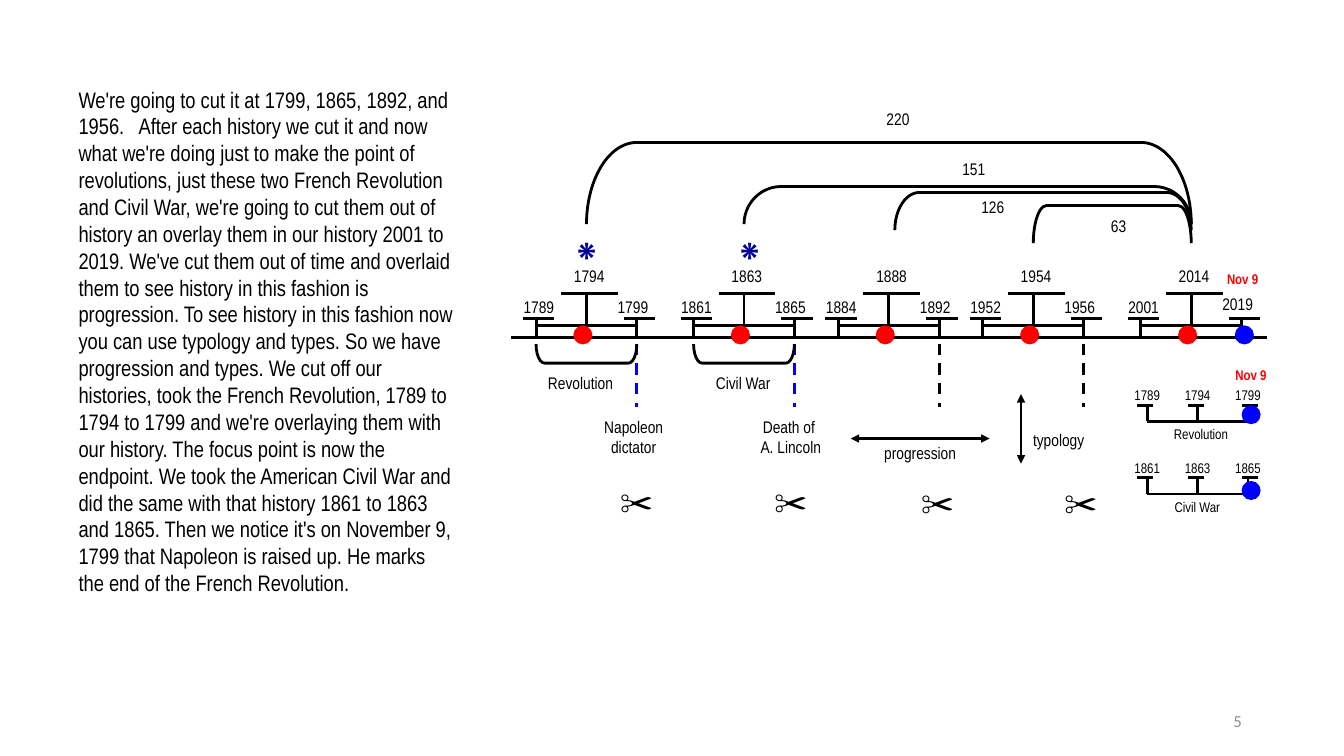
"""Build a slide of overlaid history timelines beside an explanatory text."""
import pptx
import pptx.util
import pptx.dml.color
import pptx.enum.dml
import pptx.enum.shapes
import pptx.enum.text
import lxml.etree

Cm = pptx.util.Cm
Pt = pptx.util.Pt
Shapes = pptx.enum.shapes.MSO_SHAPE
Align = pptx.enum.text.PP_ALIGN
BLACK, RED, BLUE, NAVY, GREY = "000000", "FF0000", "0000FF", "000099", "8C8C8C"
NARROW = "Arial Narrow"

STORY = [
    "We're going to cut it at 1799, 1865, 1892, and 1956.   After each history we cut it "
    "and now what we're doing just to make the point of revolutions, just these two French "
    "Revolution and Civil War, we're going to cut them out of history an overlay them in our "
    "history 2001 to 2019.",
    "We've cut them out of time and overlaid them to see history in this fashion is "
    "progression.",
    "To see history in this fashion now you can use typology and types.",
    "So we have progression and types.",
    "We cut off our histories, took the French Revolution, 1789 to 1794 to 1799 and we're "
    "overlaying them with our history.",
    "The focus point is now the endpoint.",
    "We took the American Civil War and did the same with that history 1861 to 1863 and 1865.",
    "Then we notice it's on November 9, 1799 that Napoleon is raised up.",
    "He marks the end of the French Revolution.",
]

# center, years, top of the end-year label, colour of the cut
HISTORIES = [
    (14.78, ("1789", "1794", "1799"), 7.39, BLUE),
    (18.75, ("1861", "1863", "1865"), 7.39, BLUE),
    (22.4, ("1884", "1888", "1892"), 7.39, BLACK),
    (26.04, ("1952", "1954", "1956"), 7.39, BLACK),
    (30.02, ("2001", "2014", "2019"), 7.29, None),
]
# left, top, height, corner adjustment, years, label left, label top
SPANS = [
    (18.75, 4.7, 0.95, 0.986, "151", 23.83, 3.91),
    (14.78, 3.59, 2.06, 0.615, "220", 21.92, 2.64),
    (26.04, 5.18, 0.95, 0.347, "63", 27.48, 5.33),
    (22.55, 4.85, 0.95, 0.653, "126", 24.31, 4.85),
]
# rail height, years, caption, caption width, dot top
OVERLAYS = [
    (10.62, ("1789", "1794", "1799"), "Revolution", 1.75, 10.21),
    (12.45, ("1861", "1863", "1865"), "Civil War", 1.57, 12.12),
]
# text, left, top, width, height
CAPTIONS = [
    ("Revolution", 13.51, 9.3, 2.24, 0.79),
    ("Civil War", 17.78, 9.3, 1.9, 0.79),
    ("Napoleon\ndictator", 14.94, 10.41, 2.06, 1.27),
    ("Death of \nA. Lincoln", 18.9, 10.41, 2.06, 1.27),
    ("progression", 21.92, 11.05, 2.54, 0.79),
    ("typology", 25.73, 10.74, 1.9, 0.79),
]
ARROWS = [(21.44, 11.05, 24.94, 11.05), (25.73, 9.93, 25.73, 11.68)]
STARS = [14.15, 18.26]
SCISSORS = [(15.52, 12.04), (19.41, 12.04), (23.11, 12.07), (26.72, 12.07)]
DATES = [(30.89, 9.14, 1.27), (30.53, 6.71, 1.57)]
AXIS, RAIL, SIDE_BAR, MIDDLE_BAR = 8.51, 8.2, 8.03, 7.39
HALF, DOT, NOW = 1.27, 0.48, 30.02


def color(value):
    return pptx.dml.color.RGBColor.from_string(value)


def add_line(parent, x1, y1, x2, y2, ink=BLACK, dashed=False, arrows=False):
    line = parent.shapes.add_connector(
        pptx.enum.shapes.MSO_CONNECTOR.STRAIGHT, Cm(x1), Cm(y1), Cm(x2), Cm(y2))
    line.line.color.rgb = color(ink)
    line.line.width = Pt(2)
    if dashed:
        line.line.dash_style = pptx.enum.dml.MSO_LINE.DASH
    space = "{http://schemas.openxmlformats.org/drawingml/2006/main}"
    if arrows:
        for end in ("headEnd", "tailEnd"):
            lxml.etree.SubElement(line.line._get_or_add_ln(), space + end, type="triangle")
    lxml.etree.SubElement(line._element.spPr, space + "effectLst")


def add_text(parent, text, left, top, width, height, size=12, ink=BLACK, font=NARROW,
             bold=False, align=Align.CENTER, inset=(0.1, 0.1)):
    box = parent.shapes.add_textbox(Cm(left), Cm(top), Cm(width), Cm(height))
    frame = box.text_frame
    frame.word_wrap = True
    frame.margin_left = frame.margin_right = Cm(inset[0])
    frame.margin_top = frame.margin_bottom = Cm(inset[1])
    frame.text = text
    for para in frame.paragraphs:
        para.alignment = align
        para.font.name = font
        para.font.size = Pt(size)
        para.font.bold = bold
        para.font.color.rgb = color(ink)
    return box


def add_dot(page, left, top, ink):
    dot = page.shapes.add_shape(Shapes.OVAL, Cm(left), Cm(top), Cm(DOT), Cm(DOT))
    dot.shadow.inherit = False
    dot.fill.solid()
    dot.fill.fore_color.rgb = color(ink)
    dot.line.fill.background()


def add_bracket(page, left, top, width, height, rotation, corner):
    bracket = page.shapes.add_shape(
        Shapes.LEFT_BRACKET, Cm(left + (width - height) / 2), Cm(top + (height - width) / 2),
        Cm(height), Cm(width))
    bracket.rotation = rotation
    bracket.adjustments[0] = corner
    bracket.shadow.inherit = False
    bracket.fill.background()
    bracket.line.color.rgb = color(BLACK)
    bracket.line.width = Pt(2)


def add_history(page, center, years, end_top, cut):
    start, end = center - HALF, center + HALF
    add_line(page, center, MIDDLE_BAR, center, AXIS)
    add_line(page, center - 0.64, MIDDLE_BAR, center + 0.79, MIDDLE_BAR)
    for x in (start, end):
        add_line(page, x, SIDE_BAR, x, AXIS)
        add_line(page, x - 0.33, SIDE_BAR, x + 0.46, SIDE_BAR)
    add_line(page, start, RAIL, end, RAIL)
    tops = (7.39, 6.6, end_top)
    for year, left, top in zip(years, (start - 0.64, center - 0.64, end - 0.81), tops):
        add_text(page, year, left, top, 1.42, 0.7)
    add_dot(page, center - 0.33, RAIL, RED)
    if cut:
        add_line(page, end, 8.66, end, 10.26, cut, dashed=True)


def add_overlay(page, rail, years, caption, width, dot_top):
    group = page.shapes.add_group_shape()
    first, bar = 28.91, rail - 0.41
    add_line(group, first, rail, first + 2 * HALF, rail)
    for index, year in enumerate(years):
        x = first + index * HALF
        bar_left = x - (0.15 if index == 2 else 0.25)
        add_line(group, x, bar, x, rail)
        add_line(group, bar_left, bar, bar_left + 0.4, bar)
        add_text(group, year, x - 0.5, rail - 0.97, 1, 0.56, size=10)
    add_text(page, caption, 29.39, rail, width, 0.48, size=10)
    add_dot(page, 31.29, dot_top, BLUE)


def main():
    deck = pptx.Presentation()
    deck.slide_width, deck.slide_height = Cm(33.87), Cm(19.05)
    page = deck.slides.add_slide(deck.slide_layouts[6])
    number = add_text(page, "5", 23.93, 17.65, 7.62, 1.02, ink=GREY, font="Calibri",
                      align=Align.RIGHT, inset=(0.25, 0.13))
    number.text_frame.vertical_anchor = pptx.enum.text.MSO_ANCHOR.MIDDLE
    add_text(page, " ".join(STORY), 1.73, 2.03, 9.96, 14.1, size=16, align=Align.LEFT,
             inset=(0.25, 0.13))
    add_line(page, 12.88, AXIS, 31.93, AXIS)
    for history in HISTORIES:
        add_history(page, *history)
    add_dot(page, 31.12, RAIL, BLUE)
    for center, *_ in HISTORIES[:2]:
        add_bracket(page, center - HALF, 8.67, 2 * HALF, DOT, 270, 0.444)
    for left, top, height, corner, years, label_left, label_top in SPANS:
        add_bracket(page, left, top, NOW - left, height, 90, corner)
        add_text(page, years, label_left, label_top, 1.42, 0.79)
    for caption in CAPTIONS:
        add_text(page, *caption)
    for arrow in ARROWS:
        add_line(page, *arrow, arrows=True)
    for overlay in OVERLAYS:
        add_overlay(page, *overlay)
    for left in STARS:
        add_text(page, "⁕", left, 5.66, 1.27, 0.97, 26, NAVY, "Times New Roman", True)
    for left, top in SCISSORS:
        add_text(page, "✂", left, top, 1.75, 1.42, 24, font="Arial", align=Align.LEFT)
    for left, top, width in DATES:
        add_text(page, "Nov 9", left, top, width, 0.76, 10, RED, bold=True)
    deck.save("out.pptx")


if __name__ == "__main__":
    main()
